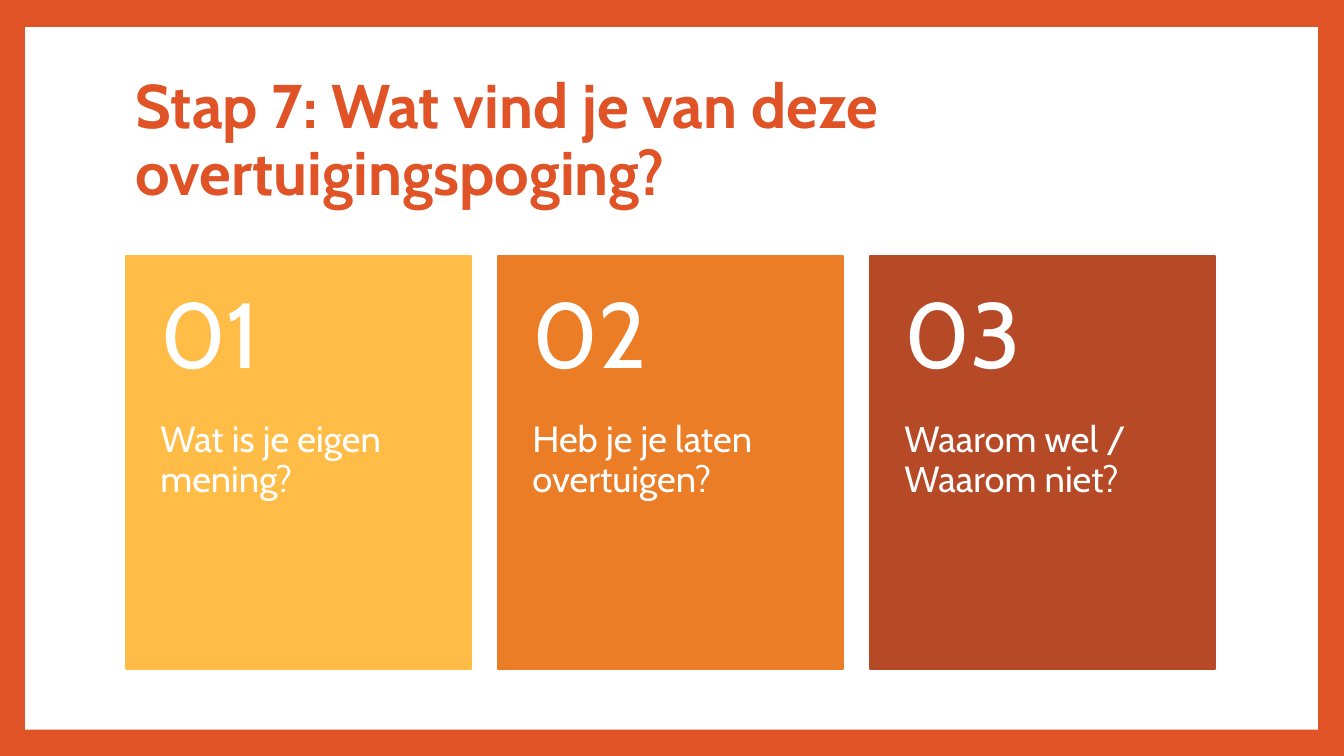
import pptx
import pptx.util
import pptx.dml.color
import pptx.enum.shapes
import pptx.enum.text

Inches = pptx.util.Inches
ANCHOR = pptx.enum.text.MSO_ANCHOR

# Content
TITLE = "Stap 7: Wat vind je van deze overtuigingspoging?"
CARDS = [
    ("01", "Wat is je eigen mening?", "yellow"),
    ("02", "Heb je je laten overtuigen?", "orange"),
    ("03", "Waarom wel / Waarom niet?", "rust"),
]
COLORS = {
    "frame": "DF5327",
    "white": "FFFFFF",
    "yellow": "FFBD47",
    "orange": "EB7D26",
    "rust": "B64926",
}

# Layout in inches
SLIDE_WIDTH, SLIDE_HEIGHT = 13.33, 7.5
PANEL = (0.25, 0.27, 12.82, 6.97)
TITLE_BOX = (1.25, 0.67, 10.8, 1.48)
CARD_LEFT, CARD_TOP, CARD_WIDTH, CARD_HEIGHT = 1.25, 2.54, 3.42, 4.1
CARD_STEP = 3.69
NUMBER_HEIGHT = 1.64

# Text formats; insets run left, top, right, bottom
TITLE_FORMAT = {"size": pptx.util.Pt(44), "bold": True}
NUMBER_FORMAT = {"size": pptx.util.Pt(66), "bold": False}
QUESTION_FORMAT = {"size": pptx.util.Pt(26), "bold": False}
TITLE_INSETS = (0.1, 0.05, 0.1, 0.05)
NUMBER_INSETS = (0.34, 0.18, 0.34, 0.18)
QUESTION_INSETS = (0.34, 0, 0.34, 0.36)


def rgb(name):
    return pptx.dml.color.RGBColor.from_string(COLORS[name])


def add_rectangle(slide, box, color, outlined):
    shape = slide.shapes.add_shape(
        pptx.enum.shapes.MSO_SHAPE.RECTANGLE, *map(Inches, box))
    shape.shadow.inherit = False
    shape.fill.solid()
    shape.fill.fore_color.rgb = rgb(color)
    if outlined:
        shape.line.color.rgb = rgb(color)
        shape.line.width = pptx.util.Pt(1.5)
    else:
        shape.line.fill.background()


def add_text(slide, box, text, color, font_format, insets, anchor):
    frame = slide.shapes.add_textbox(*map(Inches, box)).text_frame
    left, top, right, bottom = map(Inches, insets)
    frame_format = {
        "word_wrap": True, "vertical_anchor": anchor,
        "margin_left": left, "margin_top": top,
        "margin_right": right, "margin_bottom": bottom,
    }
    for name, value in frame_format.items():
        setattr(frame, name, value)
    paragraph = frame.paragraphs[0]
    paragraph.line_spacing = 0.9
    run = paragraph.add_run()
    run.text = text
    for name, value in {"name": "Cabin", **font_format}.items():
        setattr(run.font, name, value)
    run.font.color.rgb = rgb(color)


def main():
    presentation = pptx.Presentation()
    presentation.slide_width = Inches(SLIDE_WIDTH)
    presentation.slide_height = Inches(SLIDE_HEIGHT)
    slide = presentation.slides.add_slide(presentation.slide_layouts[6])

    # Coloured frame around a white panel
    slide.background.fill.solid()
    slide.background.fill.fore_color.rgb = rgb("frame")
    add_rectangle(slide, PANEL, "white", outlined=False)

    # Title
    add_text(slide, TITLE_BOX, TITLE, "frame", TITLE_FORMAT,
             TITLE_INSETS, ANCHOR.MIDDLE)

    # Numbered question cards
    for index, (number, question, color) in enumerate(CARDS):
        left = CARD_LEFT + index * CARD_STEP
        add_rectangle(slide, (left, CARD_TOP, CARD_WIDTH, CARD_HEIGHT),
                      color, outlined=True)
        question_box = (left, CARD_TOP + NUMBER_HEIGHT,
                        CARD_WIDTH, CARD_HEIGHT - NUMBER_HEIGHT)
        add_text(slide, question_box, question, "white", QUESTION_FORMAT,
                 QUESTION_INSETS, ANCHOR.TOP)
        add_text(slide, (left, CARD_TOP, CARD_WIDTH, NUMBER_HEIGHT), number,
                 "white", NUMBER_FORMAT, NUMBER_INSETS, ANCHOR.MIDDLE)

    presentation.save("out.pptx")


if __name__ == "__main__":
    main()
